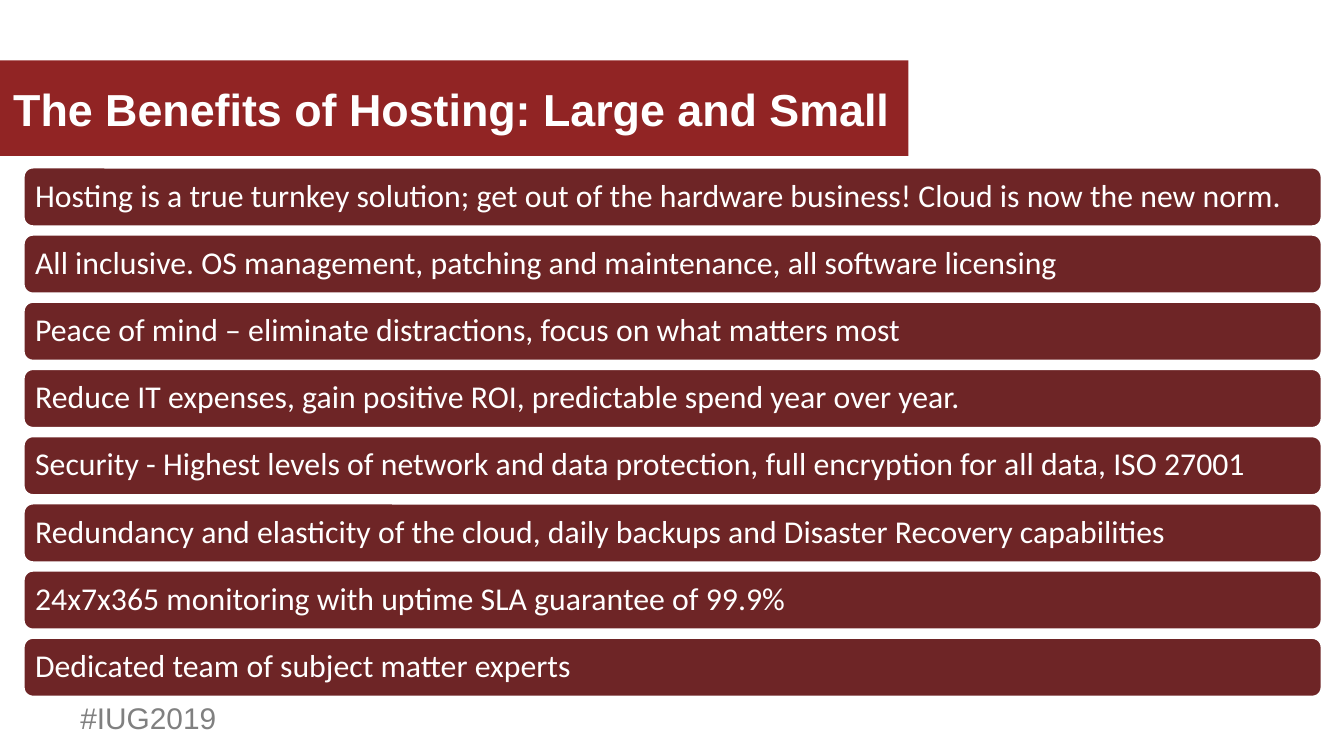
import pptx
import pptx.dml.color
import pptx.enum.shapes
import pptx.enum.text
import pptx.oxml
import pptx.oxml.ns
import pptx.util

Inches = pptx.util.Inches
Pt = pptx.util.Pt
RGBColor = pptx.dml.color.RGBColor
MSO_SHAPE = pptx.enum.shapes.MSO_SHAPE
MSO_ANCHOR = pptx.enum.text.MSO_ANCHOR
PP_ALIGN = pptx.enum.text.PP_ALIGN

BANNER_RED = RGBColor(0x80, 0x00, 0x00)
BAR_RED = RGBColor(0x6E, 0x25, 0x26)
WHITE = RGBColor(0xFF, 0xFF, 0xFF)
GREY = RGBColor(0x80, 0x80, 0x80)

BENEFITS = [
    "Hosting is a true turnkey solution; get out of the hardware business! Cloud is now the new norm.",
    "All inclusive. OS management, patching and maintenance, all software licensing",
    "Peace of mind – eliminate distractions, focus on what matters most",
    "Reduce IT expenses, gain positive ROI, predictable spend year over year.",
    "Security - Highest levels of network and data protection, full encryption for all data, ISO 27001",
    "Redundancy and elasticity of the cloud, daily backups and Disaster Recovery capabilities",
    "24x7x365 monitoring with uptime SLA guarantee of 99.9%",
    "Dedicated team of subject matter experts",
]

# Grid: one row per benefit
BAR_LEFT, BAR_WIDTH, BAR_HEIGHT = 0.17, 9.67, 0.45
FIRST_ROW, ROW_STEP = 1.24, 0.5
BAR_INSET = Inches(0.07)


def add_filled_shape(preset, left, top, width, height, color):
    shape = slide.shapes.add_shape(
        preset, Inches(left), Inches(top), Inches(width), Inches(height))
    shape.shadow.inherit = False
    shape.fill.solid()
    shape.fill.fore_color.rgb = color
    return shape


def add_text(shape, text, font_name, size, color, bold=False):
    paragraph = shape.text_frame.paragraphs[0]
    paragraph.alignment = PP_ALIGN.LEFT
    run = paragraph.add_run()
    run.text = text
    run.font.name = font_name
    run.font.size = Pt(size)
    run.font.bold = bold
    run.font.color.rgb = color
    return paragraph


# Widescreen slide, 16 by 9
presentation = pptx.Presentation()
presentation.slide_width = Inches(10)
presentation.slide_height = presentation.slide_width * 9 // 16
slide = presentation.slides.add_slide(presentation.slide_layouts[6])

# Title banner, slightly see-through
banner = add_filled_shape(MSO_SHAPE.RECTANGLE, 0, 0.45, 6.76, 0.71, BANNER_RED)
banner.line.fill.background()
banner_color = banner.fill._xPr.find(".//" + pptx.oxml.ns.qn("a:srgbClr"))
banner_color.append(pptx.oxml.parse_xml(
    f'<a:alpha {pptx.oxml.ns.nsdecls("a")} val="86000"/>'))

# Hashtag in the footer
hashtag = slide.shapes.add_textbox(
    Inches(0.5), Inches(5.08), Inches(1.22), Inches(0.41))
hashtag.text_frame.word_wrap = False
add_text(hashtag, "#IUG2019", "Arial", 16, GREY).line_spacing = 1.3

# Benefit bars
for row, benefit in enumerate(BENEFITS):
    bar = add_filled_shape(MSO_SHAPE.ROUNDED_RECTANGLE, BAR_LEFT,
                           FIRST_ROW + row * ROW_STEP, BAR_WIDTH, BAR_HEIGHT, BAR_RED)
    bar.line.color.rgb = WHITE
    bar.line.width = Pt(2)
    frame = bar.text_frame
    frame.word_wrap = True
    frame.vertical_anchor = MSO_ANCHOR.MIDDLE
    frame.margin_left = frame.margin_right = BAR_INSET
    frame.margin_top = frame.margin_bottom = BAR_INSET
    add_text(bar, benefit, "Calibri", 17, WHITE).line_spacing = 0.9

# Title
title = slide.shapes.add_textbox(0, Inches(0.45), Inches(9.5), Inches(0.72))
title.text_frame.word_wrap = True
title.text_frame.vertical_anchor = MSO_ANCHOR.MIDDLE
add_text(title, "The Benefits of Hosting: Large and Small", "Arial", 24, WHITE, bold=True)

presentation.save("out.pptx")
